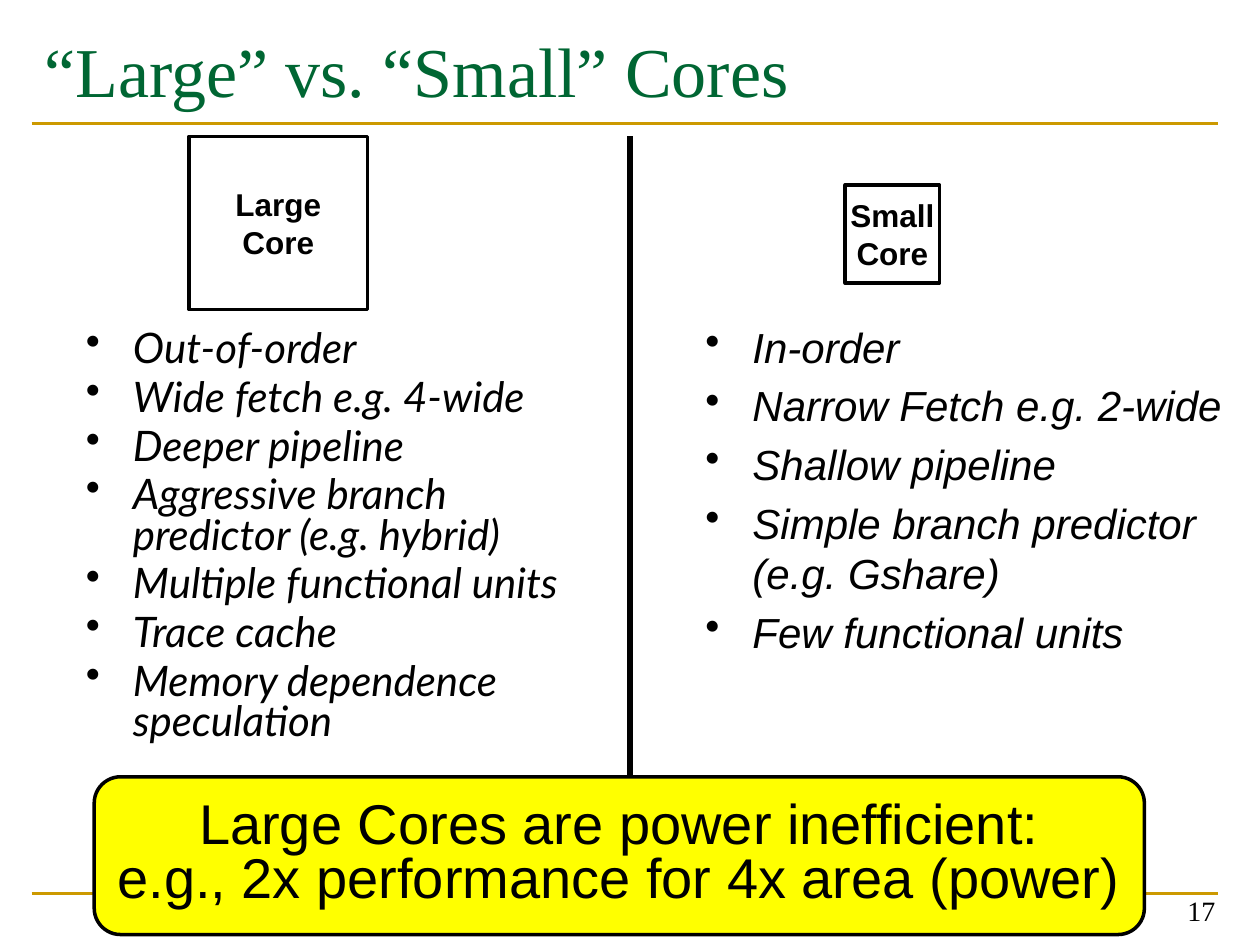
from dataclasses import dataclass

from lxml import etree
from pptx import Presentation
from pptx.dml.color import RGBColor
from pptx.enum.shapes import MSO_CONNECTOR, MSO_SHAPE
from pptx.enum.text import MSO_ANCHOR, MSO_AUTO_SIZE, PP_ALIGN
from pptx.oxml.ns import qn
from pptx.util import Cm, Pt

STRAIGHT = MSO_CONNECTOR.STRAIGHT
RECTANGLE = MSO_SHAPE.RECTANGLE
ROUNDED = MSO_SHAPE.FLOWCHART_ALTERNATE_PROCESS
TOP, MIDDLE, BOTTOM = MSO_ANCHOR.TOP, MSO_ANCHOR.MIDDLE, MSO_ANCHOR.BOTTOM
CENTER, RIGHT, LEFT = PP_ALIGN.CENTER, PP_ALIGN.RIGHT, PP_ALIGN.LEFT
NO_FIT = MSO_AUTO_SIZE.NONE

BLACK, GOLD, GREEN, YELLOW = "000000", "CC9900", "006633", "FFFF00"
SERIF, SANS, HUMANIST = "Times New Roman", "Arial", "Lato"
BULLET_INDENT = Cm(0.95)
SPACE_SHARE = 0.2  # space before a paragraph, as a share of its text size


@dataclass
class Frame:
    """Position and size in centimetres."""
    left: float
    top: float
    width: float
    height: float

    def lengths(self):
        return Cm(self.left), Cm(self.top), Cm(self.width), Cm(self.height)


@dataclass
class Rule:
    start: tuple[float, float]
    end: tuple[float, float]
    color: str
    weight: float


@dataclass
class TextStyle:
    font: str
    size: float
    color: str = BLACK
    bold: bool = False
    italic: bool = False
    align: PP_ALIGN = LEFT
    line_spacing: float | None = None
    spaced: bool = False


@dataclass
class Block:
    """A shape with a black outline and a centred label."""
    frame: Frame
    kind: MSO_SHAPE
    label: str
    style: TextStyle
    fill: str | None = None


@dataclass
class BulletList:
    frame: Frame
    style: TextStyle
    items: list[str]


CORE_STYLE = TextStyle(SANS, 18, bold=True, align=CENTER)
RULES = [
    Rule((0.64, 18.01), (24.56, 18.01), GOLD, 1.5),
    Rule((0.64, 2.49), (24.56, 2.49), GOLD, 1.5),
    Rule((12.7, 2.75), (12.7, 16.38), BLACK, 3),
]
LISTS = [
    BulletList(
        Frame(1.48, 6.56, 10.58, 9.78),
        TextStyle(HUMANIST, 24, italic=True, line_spacing=0.8, spaced=True),
        ["Out-of-order", "Wide fetch e.g. 4-wide", "Deeper pipeline",
         "Aggressive branch predictor (e.g. hybrid)", "Multiple functional units",
         "Trace cache", "Memory dependence speculation"],
    ),
    BulletList(
        Frame(13.97, 6.35, 11.43, 7.62),
        TextStyle(SANS, 24, italic=True, spaced=True),
        ["In-order", "Narrow Fetch e.g. 2-wide", "Shallow pipeline",
         "Simple branch predictor (e.g. Gshare)", "Few functional units"],
    ),
]
BLOCKS = [
    Block(Frame(3.81, 2.75, 3.6, 3.49), RECTANGLE, "Large\vCore", CORE_STYLE),
    Block(Frame(17.04, 3.73, 1.9, 1.98), RECTANGLE, "Small\vCore", CORE_STYLE),
    Block(
        Frame(1.9, 15.66, 21.17, 3.18), ROUNDED,
        "Large Cores are power inefficient:\ve.g., 2x performance for 4x area (power)",
        TextStyle(SANS, 32, align=CENTER, line_spacing=0.8, spaced=True), YELLOW,
    ),
]


def rgb(color: str) -> RGBColor:
    return RGBColor.from_string(color)


def write(paragraph, text: str, style: TextStyle) -> None:
    paragraph.text = text
    paragraph.alignment = style.align
    if style.line_spacing:
        paragraph.line_spacing = style.line_spacing
    if style.spaced:
        paragraph.space_before = Pt(style.size * SPACE_SHARE)
    font = paragraph.font
    font.name, font.size = style.font, Pt(style.size)
    font.bold, font.italic = style.bold, style.italic
    font.color.rgb = rgb(style.color)


def add_bullet(paragraph) -> None:
    properties = paragraph._p.get_or_add_pPr()
    properties.set("marL", str(BULLET_INDENT))
    properties.set("indent", str(-BULLET_INDENT))
    bullet = etree.Element(qn("a:buChar"), char="•")
    properties.find(qn("a:defRPr")).addprevious(bullet)


def set_title(slide, text: str) -> None:
    title = slide.shapes.title
    title.left, title.top, title.width, title.height = Frame(0.64, 0.43, 23.93, 2.97).lengths()
    frame = title.text_frame
    frame.vertical_anchor, frame.auto_size = TOP, NO_FIT
    write(frame.paragraphs[0], text, TextStyle(SERIF, 40, GREEN))


def add_rule(slide, rule: Rule) -> None:
    ends = [Cm(value) for value in rule.start + rule.end]
    line = slide.shapes.add_connector(STRAIGHT, *ends)
    line.line.color.rgb = rgb(rule.color)
    line.line.width = Pt(rule.weight)
    etree.SubElement(line._element.spPr, qn("a:effectLst"))


def add_text_box(slide, frame: Frame, anchor: MSO_ANCHOR = TOP):
    text_frame = slide.shapes.add_textbox(*frame.lengths()).text_frame
    text_frame.word_wrap = True
    text_frame.vertical_anchor = anchor
    return text_frame


def add_list(slide, bullets: BulletList) -> None:
    box = add_text_box(slide, bullets.frame)
    for index, item in enumerate(bullets.items):
        paragraph = box.add_paragraph() if index else box.paragraphs[0]
        write(paragraph, item, bullets.style)
        add_bullet(paragraph)


def add_block(slide, block: Block) -> None:
    shape = slide.shapes.add_shape(block.kind, *block.frame.lengths())
    shape.shadow.inherit = False
    shape.line.color.rgb = rgb(BLACK)
    shape.line.width = Pt(2)
    if block.fill:
        shape.fill.solid()
        shape.fill.fore_color.rgb = rgb(block.fill)
    else:
        shape.fill.background()
    shape.text_frame.word_wrap = False
    shape.text_frame.vertical_anchor = MIDDLE
    write(shape.text_frame.paragraphs[0], block.label, block.style)


def main() -> None:
    deck = Presentation()
    deck.slide_width, deck.slide_height = Cm(25.4), Cm(19.05)
    slide = deck.slides.add_slide(deck.slide_layouts[5])
    set_title(slide, "“Large” vs. “Small” Cores")
    number = add_text_box(slide, Frame(18.82, 17.55, 5.93, 1.27), BOTTOM)
    write(number.paragraphs[0], "17", TextStyle(SERIF, 16, align=RIGHT))
    for bullets in LISTS:
        add_list(slide, bullets)
    for rule in RULES:
        add_rule(slide, rule)
    for block in BLOCKS:
        add_block(slide, block)
    deck.save("out.pptx")


if __name__ == "__main__":
    main()
